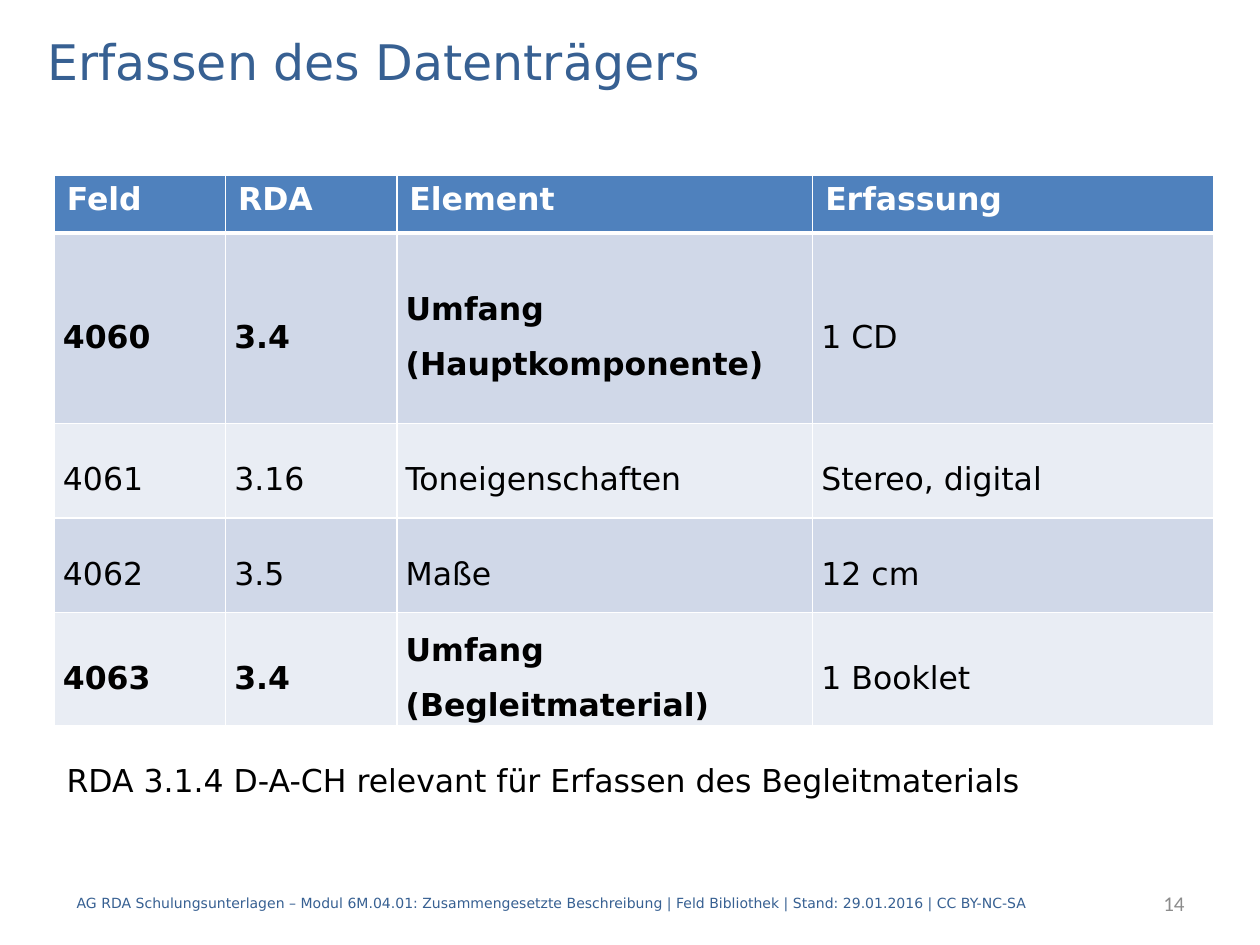
import pptx
import pptx.dml.color
import pptx.enum.text
import pptx.oxml.ns
import pptx.util
from dataclasses import dataclass
from lxml import etree
from pptx.util import Inches

ANCHOR = pptx.enum.text.MSO_ANCHOR
ALIGN = pptx.enum.text.PP_ALIGN


@dataclass(frozen=True)
class Theme:
    font: str = "DejaVu Sans"
    number_font: str = "Calibri"
    title_size: int = 28
    body_size: int = 18
    number_size: int = 12
    footer_size: int = 8
    blue: str = "376092"
    header: str = "4F81BD"
    bands: tuple = ("D0D8E8", "E9EDF4")
    white: str = "FFFFFF"
    black: str = "000000"
    grey: str = "8C8C8C"


THEME = Theme()

COLUMN_WIDTHS = (1.36, 1.36, 3.3, 3.18)
ROW_HEIGHTS = (0.46, 1.51, 0.75, 0.75, 0.75)
HEADINGS = ("Feld", "RDA", "Element", "Erfassung")
# Each entry: whether its first three cells are bold, then the cell texts
ENTRIES = (
    (True, ("4060", "3.4", "Umfang \v(Hauptkomponente)", "1 CD")),
    (False, ("4061", "3.16", "Toneigenschaften", "Stereo, digital")),
    (False, ("4062", "3.5", "Maße", "12 cm")),
    (True, ("4063", "3.4", "Umfang (Begleitmaterial)", "1 Booklet")),
)


def set_attributes(target, values):
    for name, value in values.items():
        setattr(target, name, value)


def write_text(frame, text, size, color, font=THEME.font, bold=False, **paragraph_format):
    paragraph = frame.paragraphs[0]
    paragraph.text = text
    set_attributes(paragraph, paragraph_format)
    for run in paragraph.runs:
        set_attributes(run.font, {"name": font, "size": pptx.util.Pt(size), "bold": bold})
        run.font.color.rgb = pptx.dml.color.RGBColor.from_string(color)


def add_text(slide, box, text, size, color, **text_format):
    shape = slide.shapes.add_textbox(*(Inches(length) for length in box))
    set_attributes(shape.text_frame, {"word_wrap": True, "vertical_anchor": ANCHOR.MIDDLE})
    write_text(shape.text_frame, text, size, color, **text_format)


def set_borders(cell, **widths):
    properties = cell._tc.get_or_add_tcPr()
    for side in "LRTB":
        width = pptx.util.Pt(widths.get(side, 1))
        line = etree.SubElement(properties, pptx.oxml.ns.qn(f"a:ln{side}"), w=str(width))
        fill = etree.SubElement(line, pptx.oxml.ns.qn("a:solidFill"))
        etree.SubElement(fill, pptx.oxml.ns.qn("a:srgbClr"), val=THEME.white)


def fill_cell(cell, color):
    cell.fill.solid()
    cell.fill.fore_color.rgb = pptx.dml.color.RGBColor.from_string(color)


def add_header_cell(cell, text):
    set_borders(cell, B=3)
    fill_cell(cell, THEME.header)
    write_text(cell.text_frame, text, THEME.body_size, THEME.white, bold=True)


def add_body_cell(cell, text, row, bold):
    set_borders(cell, T=3 if row == 1 else 1)
    fill_cell(cell, THEME.bands[(row - 1) % 2])
    set_attributes(cell, {
        "vertical_anchor": ANCHOR.MIDDLE,
        "margin_left": Inches(0.07), "margin_right": Inches(0.07),
        "margin_top": 0, "margin_bottom": 0,
    })
    write_text(cell.text_frame, text, THEME.body_size, THEME.black, bold=bold,
               line_spacing=1.5, space_after=pptx.util.Pt(6))


def add_entry_table(slide):
    table = slide.shapes.add_table(
        len(ROW_HEIGHTS), len(COLUMN_WIDTHS), Inches(0.43), Inches(1.39),
        Inches(sum(COLUMN_WIDTHS)), Inches(sum(ROW_HEIGHTS))).table
    table.horz_banding = False
    for column, width in zip(table.columns, COLUMN_WIDTHS):
        column.width = Inches(width)
    for row, height in zip(table.rows, ROW_HEIGHTS):
        row.height = Inches(height)
    for column, heading in enumerate(HEADINGS):
        add_header_cell(table.cell(0, column), heading)
    for row, (bold, texts) in enumerate(ENTRIES, start=1):
        for column, text in enumerate(texts):
            add_body_cell(table.cell(row, column), text, row, bold and column < 3)


def main():
    presentation = pptx.Presentation()
    set_attributes(presentation, {"slide_width": Inches(10), "slide_height": Inches(7.5)})
    slide = presentation.slides.add_slide(presentation.slide_layouts[6])

    # Slide number
    add_text(slide, (7.91, 6.97, 1.59, 0.4), "14", THEME.number_size, THEME.grey,
             font=THEME.number_font, alignment=ALIGN.RIGHT)
    # Table of recorded elements
    add_entry_table(slide)
    # Title, remark and footer
    add_text(slide, (0.28, 0.2, 9.45, 0.56), "Erfassen des Datenträgers",
             THEME.title_size, THEME.blue)
    add_text(slide, (0.43, 5.91, 9.45, 0.56),
             "RDA 3.1.4 D-A-CH relevant für Erfassen des Begleitmaterials",
             THEME.body_size, THEME.black)
    add_text(slide, (0.51, 6.97, 8.74, 0.4),
             "AG RDA Schulungsunterlagen – Modul 6M.04.01: Zusammengesetzte Beschreibung"
             " | Feld Bibliothek | Stand: 29.01.2016 | CC BY-NC-SA",
             THEME.footer_size, THEME.blue)

    presentation.save("out.pptx")


if __name__ == "__main__":
    main()
